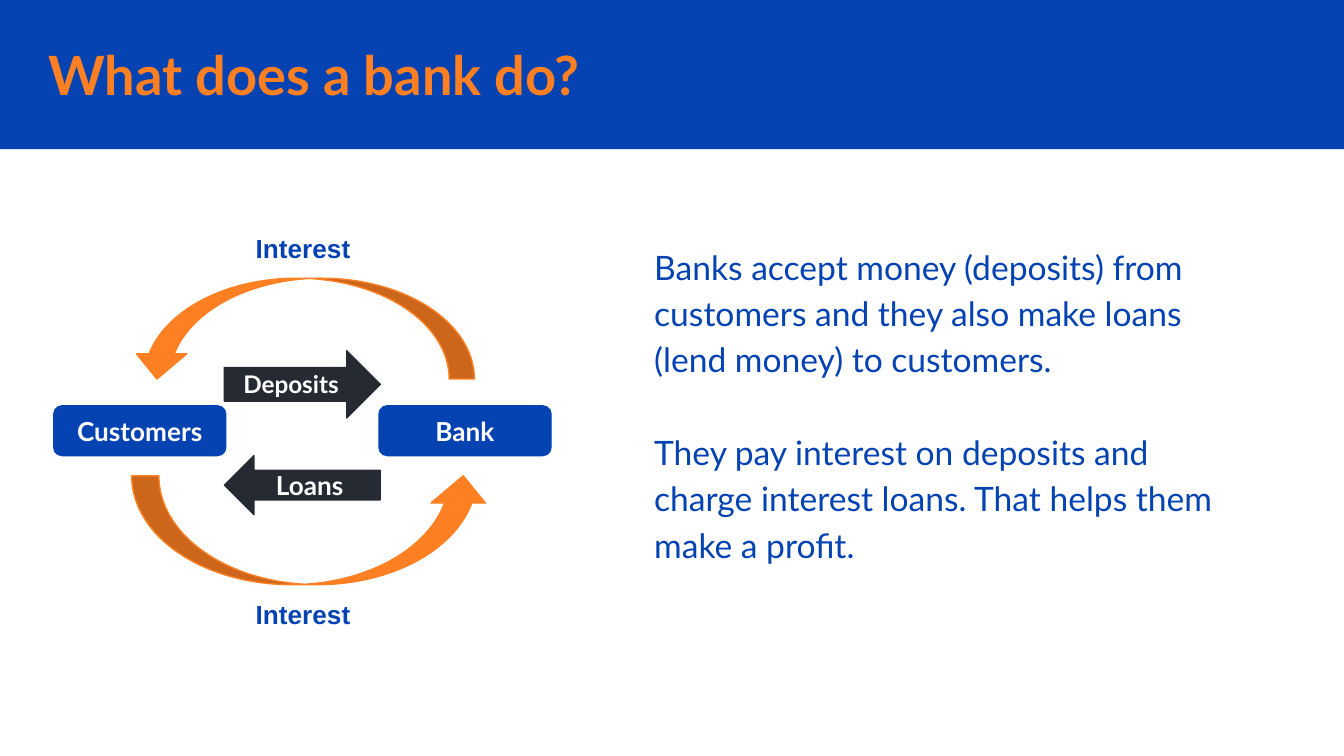
from pptx import Presentation
from pptx.dml.color import RGBColor
from pptx.enum.shapes import MSO_SHAPE as SHAPE
from pptx.enum.text import MSO_ANCHOR as ANCHOR, PP_ALIGN as ALIGN
from pptx.util import Inches, Pt

THEME = {
    "blue": RGBColor.from_string("0543B3"),
    "orange": RGBColor.from_string("FF8022"),
    "dark": RGBColor.from_string("262A33"),
    "white": RGBColor.from_string("FFFFFF"),
    "font": "Lato", "label_font": "Arial",
    "title": 29, "body": 18, "label": 14, "small": 13,
    "line": 0.75,
}

TITLE = "What does a bank do?"
EXPLANATION = [
    "Banks accept money (deposits) from customers and they also make loans "
    "(lend money) to customers.",
    "They pay interest on deposits and charge interest loans. "
    "That helps them make a profit.",
]
PARTIES = ["Customers", "Bank"]
FLOWS = [
    ("Deposits ", SHAPE.RIGHT_ARROW, 2.61, 0.5, "small"),
    ("Loans", SHAPE.LEFT_ARROW, 3.39, 0.44, "label"),
]
RETURNS = [
    ("Interest", 1.63, (0.98, 2.07, 2.55, 0.75), 0),
    ("Interest", 4.35, (0.98, 3.54, 2.67, 0.81), 180),
]

SLIDE_WIDTH = Inches(10)
SLIDE_HEIGHT = SLIDE_WIDTH * 9 // 16
PARTY_LEFT, PARTY_TOP, PARTY_WIDTH, PARTY_HEIGHT = 0.4, 3.02, 1.28, 0.37
PARTY_STEP = 2.42
FLOW_LEFT, FLOW_WIDTH = 1.67, 1.16
LABEL_LEFT, LABEL_WIDTH, LABEL_HEIGHT = 0.98, 2.55, 0.44


def write(holder, paragraphs, size, color, font="font", bold=True,
          align=ALIGN.CENTER, anchor=ANCHOR.MIDDLE):
    frame = holder.text_frame
    frame_format = {"word_wrap": True, "vertical_anchor": anchor}
    for side in ("left", "right", "top", "bottom"):
        frame_format["margin_" + side] = Inches(0.1)
    for name, value in frame_format.items():
        setattr(frame, name, value)
    frame.text = "\n".join(paragraphs)
    font_format = {"name": THEME[font], "size": Pt(THEME[size]), "bold": bold}
    for paragraph in frame.paragraphs:
        paragraph.alignment = align
        for run in paragraph.runs:
            for name, value in font_format.items():
                setattr(run.font, name, value)
            run.font.color.rgb = THEME[color]
    return frame


def add_box(slide, preset, box, color, outlined=True):
    shape = slide.shapes.add_shape(preset, *map(Inches, box))
    shape.shadow.inherit = False
    shape.fill.solid()
    shape.fill.fore_color.rgb = THEME[color]
    if outlined:
        shape.line.color.rgb = THEME[color]
        shape.line.width = Pt(THEME["line"])
    else:
        shape.line.fill.background()
    return shape


def add_text(slide, box, *args, **kwargs):
    return write(slide.shapes.add_textbox(*map(Inches, box)), *args, **kwargs)


def add_explanation(slide):
    panel = add_box(slide, SHAPE.RECTANGLE, (4.66, 1.69, 4.63, 2.6), "white",
                    outlined=False)
    frame = write(panel, EXPLANATION, "body", "blue", bold=False,
                  align=ALIGN.LEFT, anchor=ANCHOR.TOP)
    for index, paragraph in enumerate(frame.paragraphs):
        paragraph.line_spacing = 1.15
        if index:
            paragraph.space_before = Pt(24.8)
        indent = paragraph._p.get_or_add_pPr()
        indent.set("marL", str(Inches(0.11)))
        indent.set("indent", "0")


def add_cycle(slide):
    for index, party in enumerate(PARTIES):
        left = PARTY_LEFT + index * PARTY_STEP
        box = add_box(slide, SHAPE.ROUNDED_RECTANGLE,
                      (left, PARTY_TOP, PARTY_WIDTH, PARTY_HEIGHT), "blue")
        write(box, [party], "label", "white")
    for flow, preset, top, height, size in FLOWS:
        arrow = add_box(slide, preset, (FLOW_LEFT, top, FLOW_WIDTH, height), "dark")
        write(arrow, [flow], size, "white")
    for label, top, curve, rotation in RETURNS:
        arrow = add_box(slide, SHAPE.CURVED_DOWN_ARROW, curve, "orange")
        arrow.rotation = rotation
        arrow.element.spPr.xfrm.set("flipH", "1")
        add_text(slide, (LABEL_LEFT, top, LABEL_WIDTH, LABEL_HEIGHT), [label],
                 "label", "blue", font="label_font", anchor=ANCHOR.TOP)


def main():
    deck = Presentation()
    deck.slide_width, deck.slide_height = SLIDE_WIDTH, SLIDE_HEIGHT
    slide = deck.slides.add_slide(deck.slide_layouts[6])
    add_box(slide, SHAPE.RECTANGLE, (0, 0, 10, 1.11), "blue", outlined=False)
    add_text(slide, (0.26, 0.27, 8.46, 0.56), [TITLE], "title", "orange",
             align=ALIGN.LEFT)
    add_explanation(slide)
    add_cycle(slide)
    deck.save("out.pptx")


if __name__ == "__main__":
    main()
